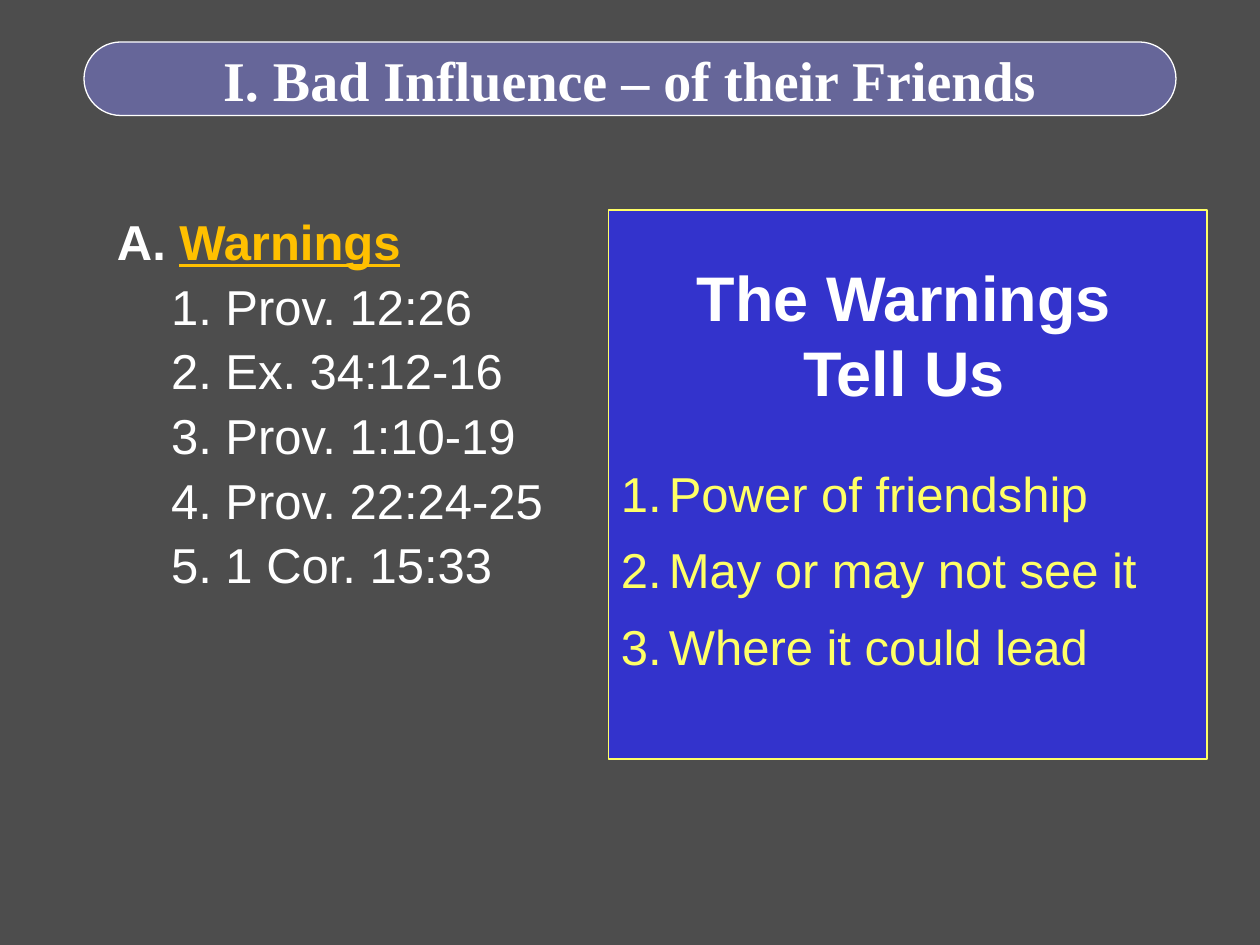
from dataclasses import dataclass

from lxml.etree import SubElement
from pptx import Presentation
from pptx.dml.color import RGBColor
from pptx.enum.shapes import MSO_SHAPE
from pptx.enum.text import MSO_ANCHOR, PP_ALIGN
from pptx.oxml.ns import qn
from pptx.util import Inches, Pt

COLORS = {
    "background": "4D4D4D",
    "banner": "666699",
    "panel": "3333CC",
    "white": "FFFFFF",
    "gold": "FFC000",
    "yellow": "FFFF66",
}
WIDTH, HEIGHT = Inches(10), Inches(7.5)
VERSES = ["Prov. 12:26", "Ex. 34:12-16", "Prov. 1:10-19", "Prov. 22:24-25", "1 Cor. 15:33"]
LESSONS = ["Power of friendship", "May or may not see it", "Where it could lead"]


@dataclass(frozen=True)
class Area:
    """A rectangle given as shares of the slide's width and height."""
    left: float
    top: float
    width: float
    height: float

    def box(self) -> tuple[int, int, int, int]:
        return (int(self.left * WIDTH), int(self.top * HEIGHT),
                int(self.width * WIDTH), int(self.height * HEIGHT))


BANNER = Area(1 / 15, 2 / 45, 13 / 15, 7 / 90)
OUTLINE = Area(0.083, 0.211, 0.363, 0.428)
PANEL = Area(0.483, 2 / 9, 0.475, 0.581)
PANEL_TITLE = Area(0.542, 4 / 15, 0.351, 0.173)


def color(name: str) -> RGBColor:
    return RGBColor.from_string(COLORS[name])


def add_run(paragraph, text: str, *, size=28, font="Arial", fill="white",
            bold=False, underline=False) -> None:
    run = paragraph.add_run()
    run.text = text
    run.font.name = font
    run.font.size = Pt(size)
    run.font.bold = bold
    run.font.underline = underline
    run.font.color.rgb = color(fill)


def next_paragraph(frame, *, align=PP_ALIGN.LEFT, spacing=1.0, margin=0.0, hanging=0.0):
    """Return the empty first paragraph, or a new one after text."""
    paragraph = frame.paragraphs[0]
    if paragraph.runs:
        paragraph = frame.add_paragraph()
    paragraph.alignment = align
    paragraph.line_spacing = spacing
    properties = paragraph._p.get_or_add_pPr()
    properties.set("marL", str(Inches(margin)))
    properties.set("indent", str(-Inches(hanging)))
    return paragraph


def number(paragraph) -> None:
    SubElement(paragraph._p.get_or_add_pPr(), qn("a:buAutoNum"), type="arabicPeriod")


def add_panel(slide, preset, area: Area, fill: str, line: str):
    shape = slide.shapes.add_shape(preset, *area.box())
    shape.shadow.inherit = False
    shape.fill.solid()
    shape.fill.fore_color.rgb = color(fill)
    shape.line.color.rgb = color(line)
    shape.line.width = Pt(0.75)
    return shape


def add_banner(slide) -> None:
    shape = add_panel(slide, MSO_SHAPE.ROUNDED_RECTANGLE, BANNER, "banner", "white")
    shape.adjustments[0] = 0.5
    frame = shape.text_frame
    frame.word_wrap = False
    frame.vertical_anchor = MSO_ANCHOR.MIDDLE
    add_run(next_paragraph(frame, align=PP_ALIGN.CENTER),
            "I. Bad Influence – of their Friends", size=32, font="Times New Roman", bold=True)


def add_outline(slide) -> None:
    frame = slide.shapes.add_textbox(*OUTLINE.box()).text_frame
    frame.word_wrap = False
    heading = next_paragraph(frame, spacing=1.1)
    add_run(heading, "A. ", bold=True)
    add_run(heading, "Warnings", fill="gold", bold=True, underline=True)
    for position, verse in enumerate(VERSES, start=1):
        add_run(next_paragraph(frame, spacing=1.1, margin=0.43), f"{position}. {verse}")


def add_lessons(slide) -> None:
    frame = add_panel(slide, MSO_SHAPE.RECTANGLE, PANEL, "panel", "yellow").text_frame
    frame.word_wrap = True
    frame.vertical_anchor = MSO_ANCHOR.TOP
    frame.margin_top = Inches(1.87)
    for lesson in LESSONS:
        paragraph = next_paragraph(frame, spacing=1.3, margin=0.38, hanging=0.38)
        number(paragraph)
        add_run(paragraph, lesson, fill="yellow")

    title = slide.shapes.add_textbox(*PANEL_TITLE.box()).text_frame
    title.word_wrap = True
    for line in ("The Warnings", "Tell Us"):
        add_run(next_paragraph(title, align=PP_ALIGN.CENTER), line, size=36, bold=True)


def main() -> None:
    presentation = Presentation()
    presentation.slide_width, presentation.slide_height = WIDTH, HEIGHT
    slide = presentation.slides.add_slide(presentation.slide_layouts[6])
    slide.background.fill.solid()
    slide.background.fill.fore_color.rgb = color("background")
    add_banner(slide)
    add_outline(slide)
    add_lessons(slide)
    presentation.save("out.pptx")


if __name__ == "__main__":
    main()
